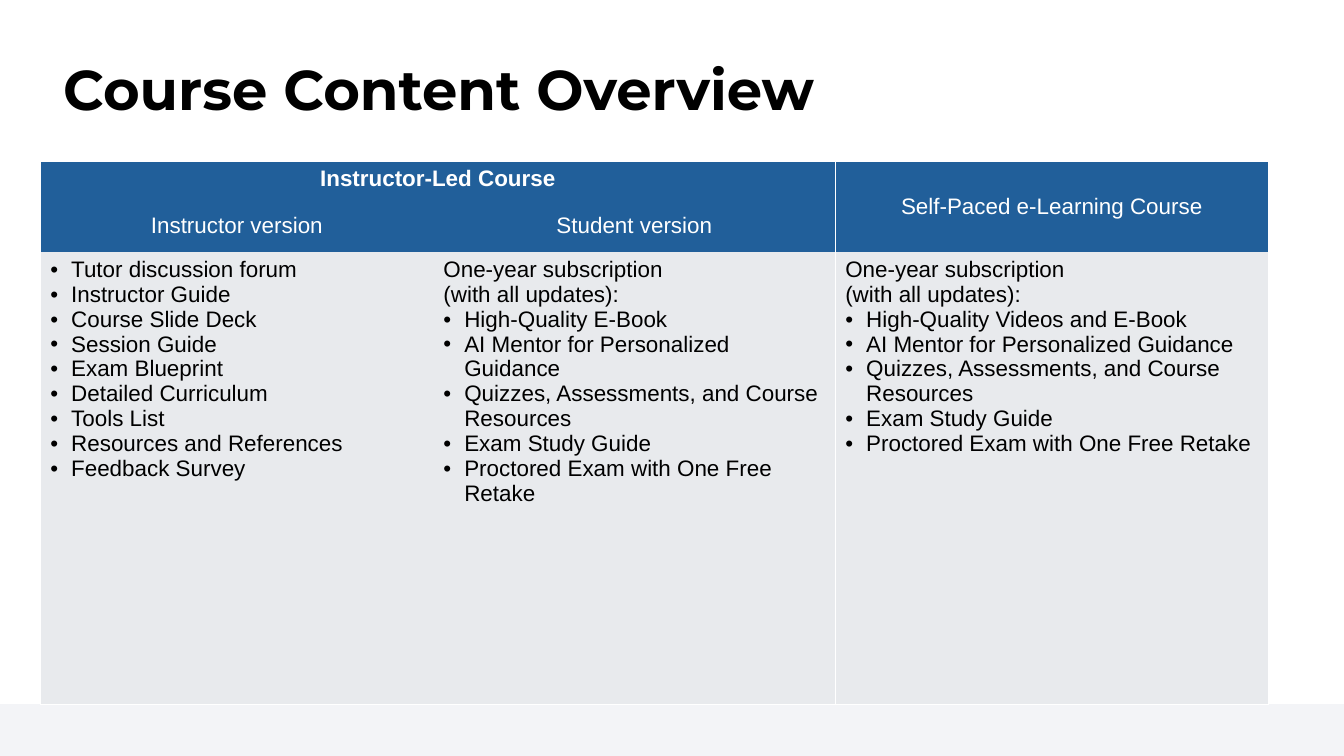
import pptx
import pptx.dml.color
import pptx.enum.shapes
import pptx.enum.text
import pptx.oxml.ns
import pptx.util
from lxml import etree

Cm = pptx.util.Cm
Pt = pptx.util.Pt
RGBColor = pptx.dml.color.RGBColor
PP_ALIGN = pptx.enum.text.PP_ALIGN
MSO_ANCHOR = pptx.enum.text.MSO_ANCHOR
qn = pptx.oxml.ns.qn

WHITE = RGBColor(0xFF, 0xFF, 0xFF)
BLACK = RGBColor(0x00, 0x00, 0x00)
HEADER_BLUE = RGBColor(0x21, 0x5F, 0x9A)
BODY_GRAY = RGBColor(0xE8, 0xEA, 0xED)
FOOTER_GRAY = RGBColor(0xF3, 0xF4, 0xF7)

COLUMN_WIDTHS = [14.86, 15.19, 16.36]
ROW_HEIGHTS = [1.78, 1.63, 17.09]
RULED_COLUMN_EDGES = {0, 2, 3}
RULED_ROW_EDGES = {0, 3}

SUBSCRIPTION = "One-year subscription\n(with all updates):"
SHARED_ITEMS = [
    "AI Mentor for Personalized Guidance",
    "Quizzes, Assessments, and Course Resources",
    "Exam Study Guide",
    "Proctored Exam with One Free Retake",
]
INSTRUCTOR_ITEMS = [
    "Tutor discussion forum",
    "Instructor Guide",
    "Course Slide Deck",
    "Session Guide",
    "Exam Blueprint",
    "Detailed Curriculum",
    "Tools List",
    "Resources and References",
    "Feedback Survey",
]
COURSE_COLUMNS = [
    (None, INSTRUCTOR_ITEMS),
    (SUBSCRIPTION, ["High-Quality E-Book"] + SHARED_ITEMS),
    (SUBSCRIPTION, ["High-Quality Videos and E-Book"] + SHARED_ITEMS),
]


class SlideBuilder:
    title_font = "Montserrat"
    body_font = "Arial"
    body_size = Pt(24)

    def __init__(self, slide):
        self.slide = slide

    def set_font(self, paragraph, name, size, color, bold=False):
        font = paragraph.font
        font.name = name
        font.size = size
        font.bold = bold
        font.color.rgb = color

    def title(self, text, left, top, width, height):
        shape = self.slide.shapes.title
        shape.left, shape.top = Cm(left), Cm(top)
        shape.width, shape.height = Cm(width), Cm(height)
        frame = shape.text_frame
        frame.text = text
        frame.word_wrap = True
        frame.vertical_anchor = MSO_ANCHOR.MIDDLE
        paragraph = frame.paragraphs[0]
        paragraph.alignment = PP_ALIGN.LEFT
        self.set_font(paragraph, self.title_font, Pt(60), BLACK, True)

    def band(self, left, top, width, height, color):
        shape = self.slide.shapes.add_shape(
            pptx.enum.shapes.MSO_SHAPE.RECTANGLE,
            Cm(left), Cm(top), Cm(width), Cm(height))
        shape.shadow.inherit = False
        shape.fill.solid()
        shape.fill.fore_color.rgb = color
        shape.line.fill.background()

    def table(self, left, top, column_widths, row_heights):
        table = self.slide.shapes.add_table(
            len(row_heights), len(column_widths), Cm(left), Cm(top),
            Cm(sum(column_widths)), Cm(sum(row_heights))).table
        table.first_row = False
        table.horz_banding = False
        for column, width in zip(table.columns, column_widths):
            column.width = Cm(width)
        for row, height in zip(table.rows, row_heights):
            row.height = Cm(height)
        return table

    def style_cell(self, cell, row, column, color):
        cell.margin_left = cell.margin_right = Cm(0.38)
        cell.margin_top = cell.margin_bottom = Cm(0.18)
        properties = cell._tc.get_or_add_tcPr()
        borders = {
            "a:lnL": column in RULED_COLUMN_EDGES,
            "a:lnR": column + 1 in RULED_COLUMN_EDGES,
            "a:lnT": row in RULED_ROW_EDGES,
            "a:lnB": row + 1 in RULED_ROW_EDGES,
        }
        for tag, ruled in borders.items():
            line = etree.SubElement(properties, qn(tag), w=str(Pt(1)))
            if ruled:
                fill = etree.SubElement(line, qn("a:solidFill"))
                etree.SubElement(fill, qn("a:srgbClr"), val=str(WHITE))
            else:
                etree.SubElement(line, qn("a:noFill"))
        cell.fill.solid()
        cell.fill.fore_color.rgb = color

    def header(self, cell, text, bold=False, anchor=MSO_ANCHOR.TOP):
        cell.vertical_anchor = anchor
        paragraph = cell.text_frame.paragraphs[0]
        paragraph.text = text
        paragraph.alignment = PP_ALIGN.CENTER
        self.set_font(paragraph, self.body_font, self.body_size, WHITE, bold)

    def bullet_list(self, cell, intro, items):
        frame = cell.text_frame
        lines = [(intro, False)] if intro else []
        lines += [(item, True) for item in items]
        for index, (text, bulleted) in enumerate(lines):
            paragraph = frame.add_paragraph() if index else frame.paragraphs[0]
            paragraph.text = text
            if bulleted:
                self.add_bullet(paragraph)
            self.set_font(paragraph, self.body_font, self.body_size, BLACK)

    def add_bullet(self, paragraph):
        properties = paragraph._p.get_or_add_pPr()
        properties.set("marL", str(Cm(0.79)))
        properties.set("indent", str(-Cm(0.79)))
        color = etree.SubElement(properties, qn("a:buClr"))
        etree.SubElement(color, qn("a:srgbClr"), val=str(BLACK))
        etree.SubElement(properties, qn("a:buFont"), typeface=self.body_font)
        etree.SubElement(properties, qn("a:buChar"), char="•")


def main():
    presentation = pptx.Presentation()
    presentation.slide_width = Cm(50.8)
    presentation.slide_height = Cm(28.58)
    slide = presentation.slides.add_slide(presentation.slide_layouts[5])
    builder = SlideBuilder(slide)

    builder.band(0, 26.62, 50.8, 1.96, FOOTER_GRAY)
    builder.title("Course Content Overview", 2.13, 1.91, 46.33, 2.82)

    table = builder.table(1.52, 6.12, COLUMN_WIDTHS, ROW_HEIGHTS)
    for row in range(len(ROW_HEIGHTS)):
        for column in range(len(COLUMN_WIDTHS)):
            color = BODY_GRAY if row == 2 else HEADER_BLUE
            builder.style_cell(table.cell(row, column), row, column, color)
    table.cell(0, 0).merge(table.cell(0, 1))
    table.cell(0, 2).merge(table.cell(1, 2))

    builder.header(table.cell(0, 0), "Instructor-Led Course", bold=True)
    builder.header(table.cell(0, 2), "Self-Paced e-Learning Course",
                   anchor=MSO_ANCHOR.MIDDLE)
    builder.header(table.cell(1, 0), "Instructor version")
    builder.header(table.cell(1, 1), "Student version")
    for column, (intro, items) in enumerate(COURSE_COLUMNS):
        builder.bullet_list(table.cell(2, column), intro, items)

    presentation.save("out.pptx")


if __name__ == "__main__":
    main()
